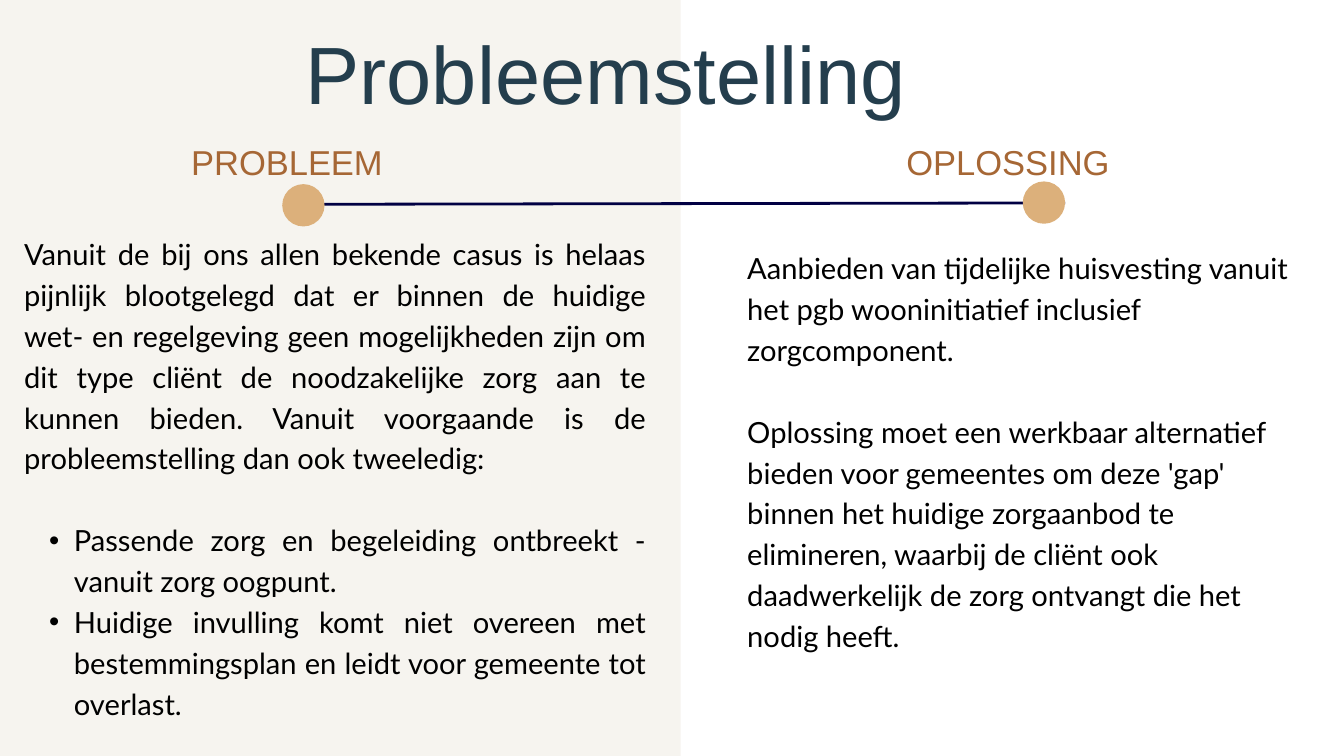
"""Build the Probleemstelling slide: problem on the left, solution on the right."""
from lxml import etree
from pptx import Presentation
from pptx.dml.color import RGBColor
from pptx.enum import shapes, text
from pptx.oxml import ns
from pptx.util import Inches, Pt

CREAM = RGBColor(0xF6, 0xF4, 0xEF)
SLATE = RGBColor(0x24, 0x3E, 0x4D)
BROWN = RGBColor(0xA6, 0x67, 0x35)
SAND = RGBColor(0xDC, 0xB0, 0x7B)
NAVY = RGBColor(0x01, 0x00, 0x43)
BLACK = RGBColor(0x00, 0x00, 0x00)

LEFT, CENTER, JUSTIFY = text.PP_ALIGN.LEFT, text.PP_ALIGN.CENTER, text.PP_ALIGN.JUSTIFY
BODY_LINE = 43.8

presentation = Presentation()
presentation.slide_width = Inches(20)
presentation.slide_height = Inches(11.25)
slide = presentation.slides.add_slide(presentation.slide_layouts[6])


def add_filled_shape(kind, left, top, width, height, color):
    shape = slide.shapes.add_shape(kind, Inches(left), Inches(top), Inches(width), Inches(height))
    shape.shadow.inherit = False
    shape.fill.solid()
    shape.fill.fore_color.rgb = color
    shape.line.fill.background()


def add_text(box, paragraphs, font, size, color, line, alignment):
    frame = slide.shapes.add_textbox(*[Inches(value) for value in box]).text_frame
    frame.word_wrap = True
    frame.margin_left = frame.margin_right = frame.margin_top = frame.margin_bottom = 0
    for index, (content, bullet, gap) in enumerate(paragraphs):
        paragraph = frame.paragraphs[0] if index == 0 else frame.add_paragraph()
        paragraph.alignment = alignment
        paragraph.line_spacing = Pt(line)
        if gap:
            paragraph.space_before = Pt(gap)
        if bullet:
            paragraph.level = 1
            properties = paragraph._p.get_or_add_pPr()
            properties.set("marL", str(Inches(0.74)))
            properties.set("indent", str(Inches(-0.37)))
            etree.SubElement(properties, ns.qn("a:buFont")).set("typeface", "Arial")
            etree.SubElement(properties, ns.qn("a:buChar")).set("char", "•")
        run = paragraph.add_run()
        run.text = content
        run.font.name = font
        run.font.size = Pt(size)
        run.font.color.rgb = color


add_filled_shape(shapes.MSO_SHAPE.RECTANGLE, -0.16, 0, 10.29, 11.25, CREAM)

add_text((4.55, 0.11, 11.3, 1.63), [("Probleemstelling", False, 0)], "Arial", 87, SLATE, 121.8, LEFT)
for heading, left, width in (("PROBLEEM", 0.36, 7.82), ("OPLOSSING", 11.12, 7.76)):
    add_text((left, 1.99, width, 0.69), [(heading, False, 0)], "Arial", 37, BROWN, 51.8, CENTER)

timeline = slide.shapes.add_connector(
    shapes.MSO_CONNECTOR.STRAIGHT, Inches(4.74), Inches(3.04), Inches(15.85), Inches(3.02))
timeline.line.color.rgb = NAVY
timeline.line.width = Pt(3)
etree.SubElement(timeline._element.spPr, ns.qn("a:effectLst"))

for left, top in ((4.2, 2.74), (15.22, 2.7)):
    add_filled_shape(shapes.MSO_SHAPE.OVAL, left, top, 0.63, 0.63, SAND)

problem = [
    ("Vanuit de bij ons allen bekende casus is helaas pijnlijk blootgelegd dat er binnen de "
     "huidige wet- en regelgeving geen mogelijkheden zijn om dit type cliënt de noodzakelijke "
     "zorg aan te kunnen bieden. Vanuit voorgaande is de probleemstelling dan ook tweeledig:",
     False, 0),
    ("Passende zorg en begeleiding ontbreekt - vanuit zorg oogpunt.", True, BODY_LINE),
    ("Huidige invulling komt niet overeen met bestemmingsplan en leidt voor gemeente tot "
     "overlast.", True, 0),
]
solution = [
    ("Aanbieden van tijdelijke huisvesting vanuit het pgb wooninitiatief inclusief "
     "zorgcomponent.", False, 0),
    ("Oplossing moet een werkbaar alternatief bieden voor gemeentes om deze 'gap' binnen het "
     "huidige zorgaanbod te elimineren, waarbij de cliënt ook daadwerkelijk de zorg ontvangt "
     "die het nodig heeft.", False, BODY_LINE),
]
add_text((0.36, 3.43, 9.25, 7.24), problem, "Lato", 31.2, BLACK, BODY_LINE, JUSTIFY)
add_text((11.12, 3.64, 8.24, 5.42), solution, "Lato", 31.2, BLACK, BODY_LINE, LEFT)

presentation.save("out.pptx")
